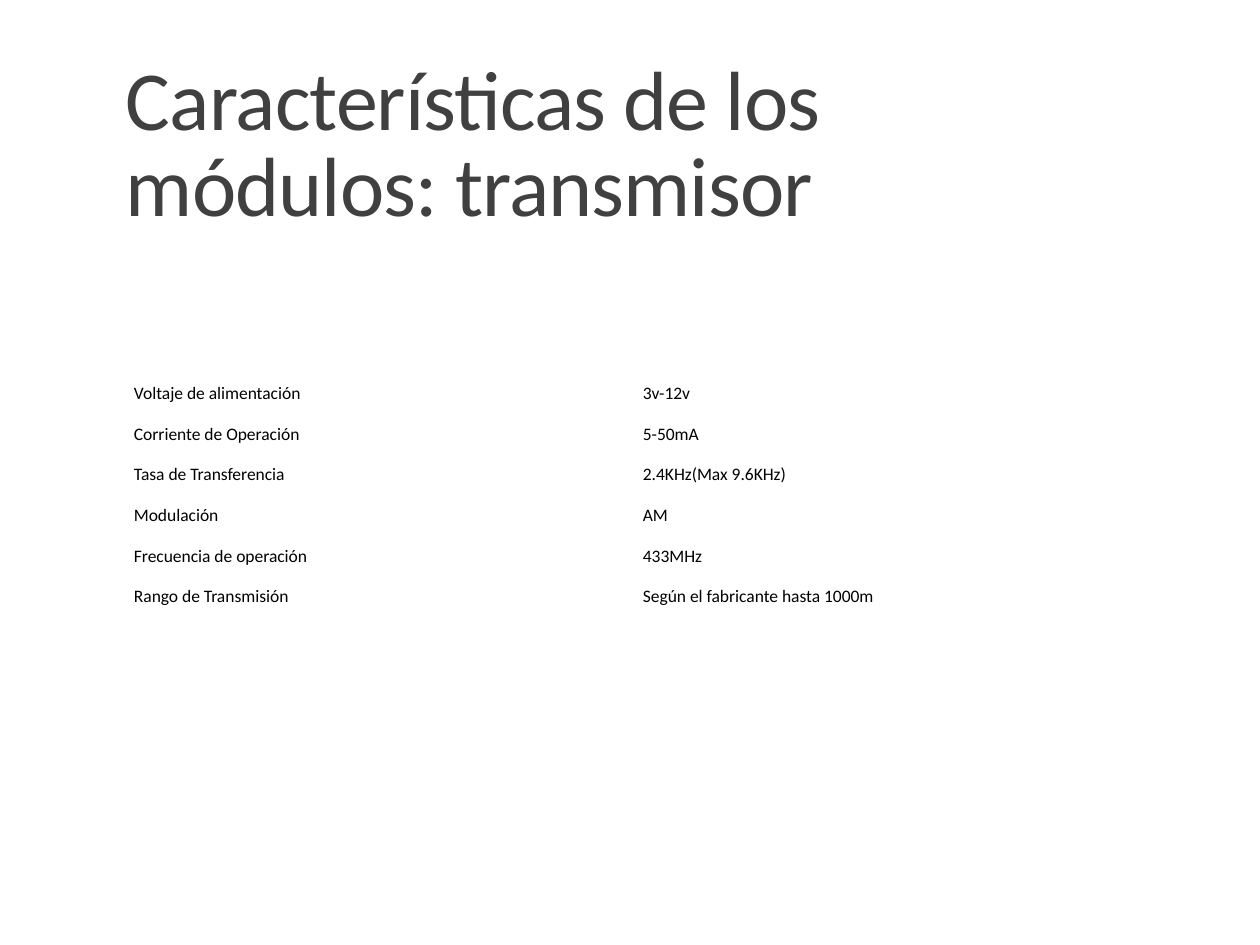
from pptx import Presentation
from pptx.dml.color import RGBColor
from pptx.enum.text import MSO_ANCHOR
from pptx.util import Cm, Pt

BOTTOM = MSO_ANCHOR.BOTTOM
MIDDLE = MSO_ANCHOR.MIDDLE
WHITE = RGBColor(0xFF, 0xFF, 0xFF)
BLACK = RGBColor(0x00, 0x00, 0x00)
GRAY = RGBColor(0x40, 0x40, 0x40)
FONT = "Calibri"
ROWS = [
    ("Voltaje de alimentación", "3v-12v"),
    ("Corriente de Operación", "5-50mA"),
    ("Tasa de Transferencia", "2.4KHz(Max 9.6KHz)"),
    ("Modulación", "AM"),
    ("Frecuencia de operación", "433MHz"),
    ("Rango de Transmisión", "Según el fabricante hasta 1000m"),
]
ROW_H = Cm(0.82)
COL_W = Cm(10.26)
PAD = Cm(0.19)


def format_run(p, size, color):
    r = p.runs[0]
    r.font.name = FONT
    r.font.size = Pt(size)
    r.font.color.rgb = color
    return r


prs = Presentation()
prs.slide_width = Cm(25.4)
prs.slide_height = Cm(19.05)
s = prs.slides.add_slide(prs.slide_layouts[6])
s.background.fill.solid()
s.background.fill.fore_color.rgb = WHITE

title = s.shapes.add_textbox(Cm(2.29), Cm(0.79), Cm(20.95), Cm(4.04))
tf = title.text_frame
tf.word_wrap = True
tf.vertical_anchor = BOTTOM
tf.margin_right = Cm(0.5)
p = tf.paragraphs[0]
p.text = "Características de los módulos: transmisor"
p.line_spacing = 0.85
r = format_run(p, 48, GRAY)
r.font._element.set("spc", "-50")

frame = s.shapes.add_table(len(ROWS), 2, Cm(2.51), Cm(7.52), 2 * COL_W, len(ROWS) * ROW_H)
table = frame.table
table.first_row = False
table.horz_banding = False
for col in table.columns:
    col.width = COL_W
for i, texts in enumerate(ROWS):
    table.rows[i].height = ROW_H
    for j, text in enumerate(texts):
        cell = table.cell(i, j)
        cell.fill.solid()
        cell.fill.fore_color.rgb = WHITE
        cell.vertical_anchor = MIDDLE
        cell.margin_left = cell.margin_right = PAD
        cell.margin_top = cell.margin_bottom = PAD
        cell.text_frame.text = text
        format_run(cell.text_frame.paragraphs[0], 10, BLACK)

prs.save("out.pptx")
